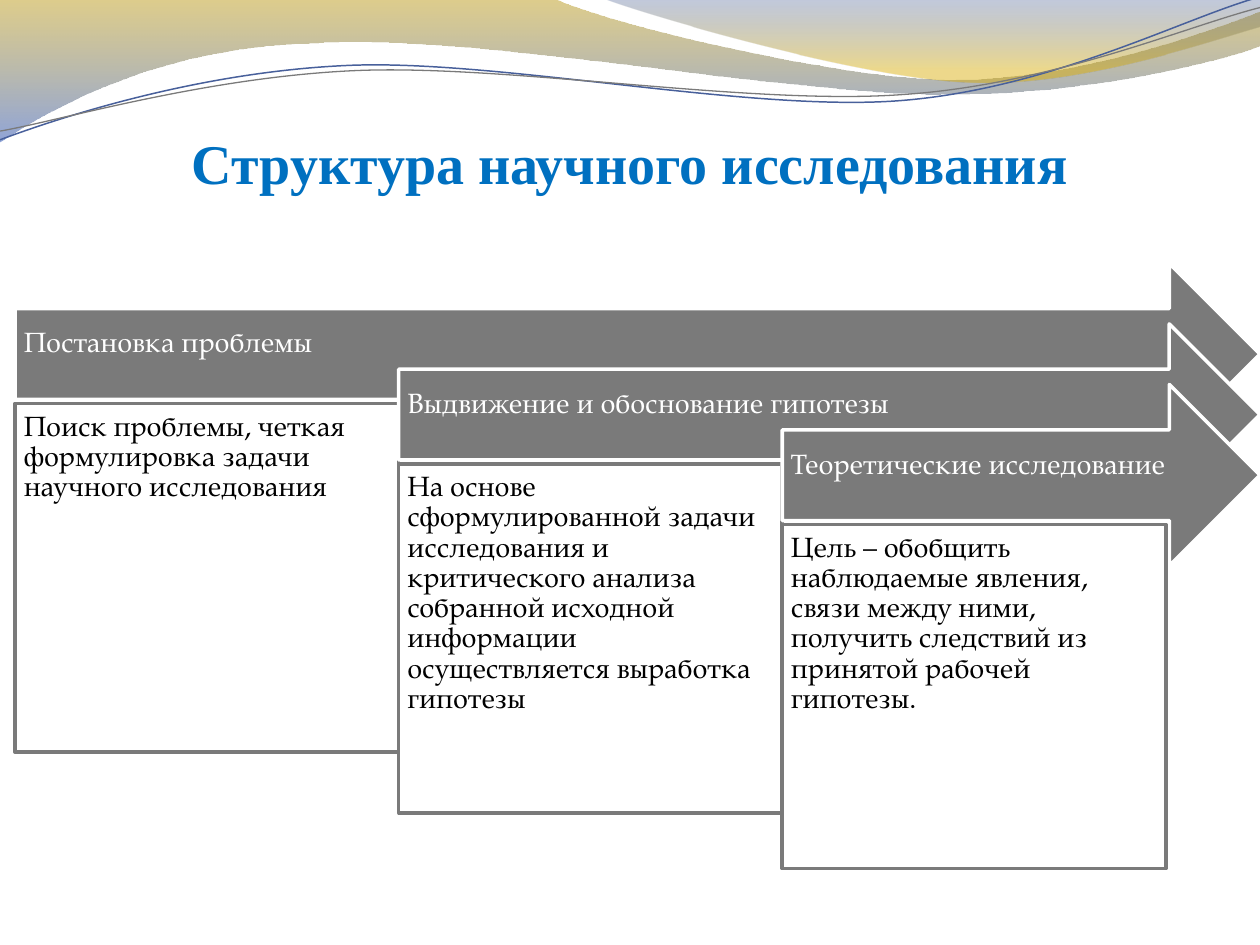
from dataclasses import dataclass

from lxml.etree import SubElement
from pptx import Presentation
from pptx.dml.color import RGBColor
from pptx.enum.shapes import MSO_SHAPE
from pptx.enum.text import MSO_ANCHOR, MSO_AUTO_SIZE, PP_ALIGN
from pptx.oxml.ns import qn
from pptx.util import Pt


@dataclass(frozen=True)
class Theme:
    title_font: str = "Times New Roman"
    body_font: str = "TeX Gyre Pagella"
    title_size: float = 32
    body_size: float = 16
    title: str = "0070C0"
    gray: str = "7A7A7A"
    white: str = "FFFFFF"
    black: str = "000000"
    blue_line: str = "48609B"
    outline: float = 2
    lower_gradient: tuple = ((0, "B69000", 45), (1, "3359B7", 55))
    upper_gradient: tuple = ((0, "324C8D", 30), (0.8, "D9AC00", 45))


@dataclass(frozen=True)
class Box:
    left: float
    top: float
    width: float
    height: float

    def lengths(self):
        return Pt(self.left), Pt(self.top), Pt(self.width), Pt(self.height)


THEME = Theme()

LOWER_WAVE = (
    ((0, 0),),
    ((316.8, -0.7),),
    ((342.7, 12.2), (478.1, 45.4), (545.8, 45.4)),
    ((614.2, 45.4), (689.8, 18.7), (720, 6.5)),
    ((720.7, 25.9),),
    ((707.8, 31.7), (626.4, 54.7), (537.1, 54)),
    ((447.8, 54), (275, 20.2), (185, 24.5)),
    ((92.9, 25.9), (33.1, 59.8), (-0.7, 81.4)),
)
UPPER_WAVE = (
    ((344.9, -0.7),),
    ((366.5, 7.9), (491, 44.6), (553.7, 46.8)),
    ((616.3, 49.7), (691.9, 23), (720, 15.1)),
    ((720, 0),),
)
BLUE_CURVE = (
    ((0, 79.9),),
    ((34.6, 67), (113.8, 41), (199.4, 37.4)),
    ((284.4, 33.8), (427, 64.1), (513.4, 57.6)),
    ((599.8, 51.1), (675.4, 10.8), (718.6, -1.4)),
)
GRAY_CURVE = (
    ((0, 74.9),),
    ((33.8, 69.1), (118.1, 43.9), (203.8, 40.3)),
    ((290.2, 36.7), (429.8, 60.5), (516.2, 54)),
    ((601.9, 48.2), (677.5, 15.1), (720, 4.3)),
)

STAGES = (
    ("Постановка проблемы",
     "Поиск проблемы, четкая формулировка задачи научного исследования", 199.4),
    ("Выдвижение и обоснование гипотезы",
     "На основе сформулированной задачи исследования и критического анализа "
     "собранной исходной информации осуществляется выработка гипотезы", 199.4),
    ("Теоретические исследование",
     "Цель – обобщить наблюдаемые явления, связи между ними, получить "
     "следствий из принятой рабочей гипотезы.", 196.6),
)


def color(value):
    return RGBColor.from_string(value)


def add_curve(slide, box, segments, closed):
    points = [(Pt(box.left + x), Pt(box.top + y))
              for segment in segments for x, y in segment]
    builder = slide.shapes.build_freeform(*points[0], scale=1.0)
    builder.add_line_segments(points[1:], close=closed)
    shape = builder.convert_to_shape()
    shape.shadow.inherit = False
    outline = next(shape.element.iter(qn("a:path")))
    lines = iter(outline.findall(qn("a:lnTo")))
    for segment in segments[1:]:
        group = [next(lines) for point in segment]
        if len(group) == 3:
            curve = SubElement(outline, qn("a:cubicBezTo"))
            group[0].addprevious(curve)
            for line in group:
                curve.append(line[0])
                outline.remove(line)
    return shape


def add_wave(slide, box, segments, gradient):
    shape = add_curve(slide, box, segments, closed=True)
    shape.line.fill.background()
    shape.fill.gradient()
    shape.fill.gradient_angle = 270
    for stop, (position, value, _) in zip(shape.fill.gradient_stops, gradient):
        stop.position = position
        stop.color.rgb = color(value)
    for element, (_, _, opacity) in zip(shape.element.iter(qn("a:srgbClr")), gradient):
        SubElement(element, qn("a:alpha"), val=str(opacity * 1000))


def add_banner(slide, box):
    add_wave(slide, box, LOWER_WAVE, THEME.lower_gradient)
    add_wave(slide, box, UPPER_WAVE, THEME.upper_gradient)
    for segments, value, width in ((BLUE_CURVE, THEME.blue_line, 0.85),
                                   (GRAY_CURVE, THEME.gray, 0.75)):
        shape = add_curve(slide, box, segments, closed=False)
        shape.fill.background()
        shape.line.color.rgb = color(value)
        shape.line.width = Pt(width)


def set_margins(frame, left, top, right, bottom):
    frame.margin_left, frame.margin_top = Pt(left), Pt(top)
    frame.margin_right, frame.margin_bottom = Pt(right), Pt(bottom)


def set_font(paragraph, name, size, value, bold=False):
    font = paragraph.font
    font.name, font.size, font.bold = name, Pt(size), bold
    font.color.rgb = color(value)


def place_title(slide, box, text):
    title = slide.shapes.title
    title.left, title.top, title.width, title.height = box.lengths()
    frame = title.text_frame
    frame.text = text
    frame.auto_size = MSO_AUTO_SIZE.NONE
    frame.vertical_anchor = MSO_ANCHOR.BOTTOM
    set_margins(frame, 0, 3.6, 0, 0)
    paragraph = frame.paragraphs[0]
    paragraph.alignment = PP_ALIGN.CENTER
    set_font(paragraph, THEME.title_font, THEME.title_size, THEME.title, bold=True)


def add_panel(slide, kind, box, text, fill, line, text_color, anchor, margins):
    shape = slide.shapes.add_shape(kind, *box.lengths())
    shape.shadow.inherit = False
    shape.fill.solid()
    shape.fill.fore_color.rgb = color(fill)
    shape.line.color.rgb = color(line)
    shape.line.width = Pt(THEME.outline)
    frame = shape.text_frame
    frame.text = text
    frame.word_wrap = True
    frame.vertical_anchor = anchor
    set_margins(frame, *margins)
    paragraph = frame.paragraphs[0]
    paragraph.alignment = PP_ALIGN.LEFT
    paragraph.line_spacing = 0.9
    set_font(paragraph, THEME.body_font, THEME.body_size, text_color)


def add_stages(slide, box):
    column_width, step_down, arrow_height, card_offset = 219.2, 34.6, 103.7, 80
    for index, (heading, detail, card_height) in enumerate(STAGES):
        shift = index * column_width
        left, top = box.left + shift, box.top + index * step_down
        add_panel(slide, MSO_SHAPE.RIGHT_ARROW,
                  Box(left, top, box.width - shift, arrow_height), heading,
                  THEME.gray, THEME.white, THEME.white,
                  MSO_ANCHOR.MIDDLE, (5, 5, 20, 16.5))
        add_panel(slide, MSO_SHAPE.RECTANGLE,
                  Box(left, top + card_offset, column_width, card_height), detail,
                  THEME.white, THEME.gray, THEME.black,
                  MSO_ANCHOR.TOP, (5, 5, 5, 5))


def main():
    presentation = Presentation()
    presentation.slide_width, presentation.slide_height = Pt(720), Pt(540)
    slide = presentation.slides.add_slide(presentation.slide_layouts[5])
    add_banner(slide, Box(0, 0, 720, 82))
    place_title(slide, Box(36, 55.4, 648, 56.2), "Структура научного исследования")
    add_stages(slide, Box(8.6, 150.5, 711.4, 345.6))
    presentation.save("out.pptx")


if __name__ == "__main__":
    main()
